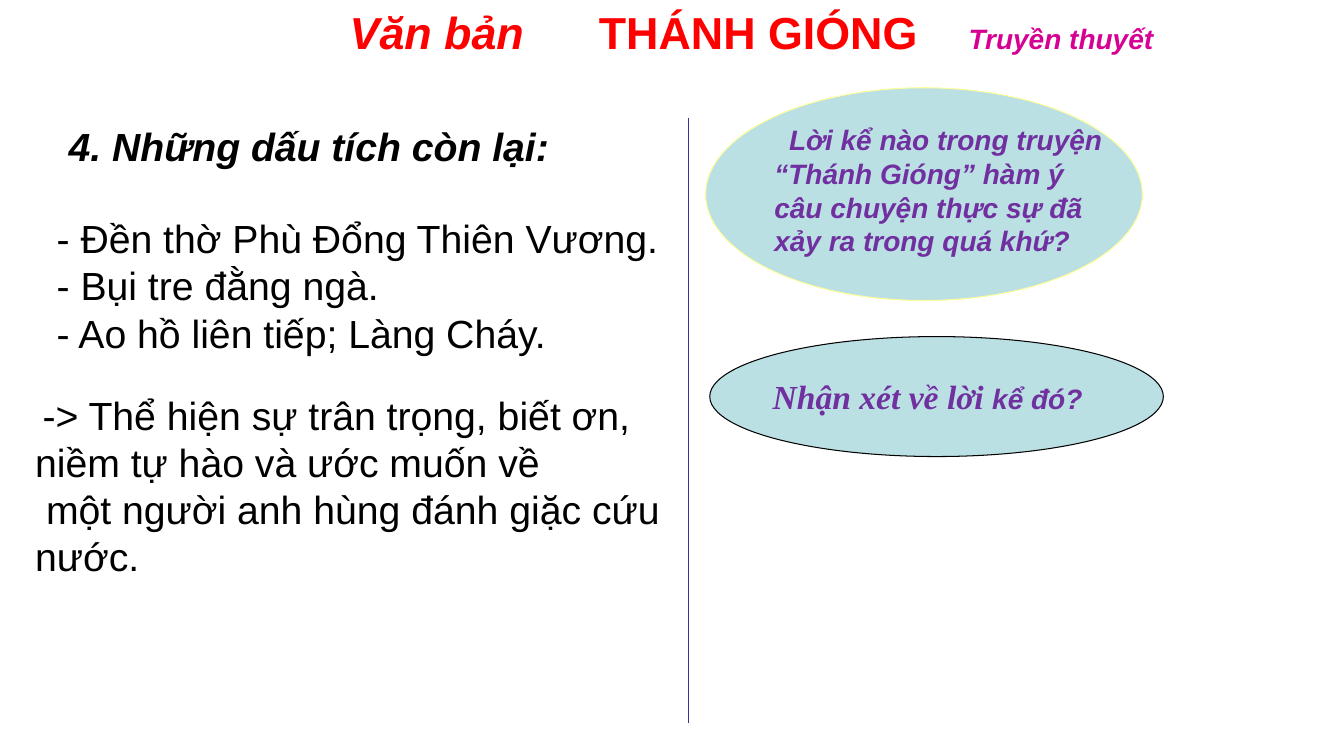
from lxml import etree
from pptx import Presentation
from pptx.dml.color import RGBColor
from pptx.enum import shapes, text
from pptx.oxml import ns
from pptx.util import Pt

SIZE = (960, 540)
RED, PINK, PURPLE, BLACK = "FF0000", "D60093", "7030A0", "000000"

TITLE = {
    "box": (242.6, 0, 590, 46),
    "tabs": (178, 442),
    "runs": [
        ("Văn bản\t", {"size": 32, "bold": True, "italic": True, "color": RED}),
        ("THÁNH GIÓNG\t", {"size": 32, "bold": True, "italic": False, "color": RED}),
        ("Truyền thuyết", {"size": 20, "bold": True, "italic": True, "color": PINK}),
    ],
}

BODY = {"size": 28, "color": BLACK}
HEAD = {"size": 28, "color": BLACK, "bold": True, "italic": True}
ASK = {"size": 20, "color": PURPLE, "bold": True, "italic": True}
SERIF = {**ASK, "size": 24, "name": "Times New Roman"}

OVALS = [
    ((507, 240.4, 324, 85.7), BLACK),
    ((504, 62.7, 312, 152), "FFFF99"),
]
FILL = "BBE0E3"
RULE = (492, 84.2, 492, 516.2)

NOTES = [
    ((42, 84.2, 435.6, 41), [(0, [("4. Những dấu tích còn lại:", HEAD)])]),
    ((10, 149.8, 470.2, 108.7), [
        (23.4, [("- Đền thờ Phù Đổng Thiên Vương.", BODY)]),
        (23.4, [("- Bụi tre đằng ngà.", BODY)]),
        (23.4, [("- Ao hồ liên tiếp; Làng Cháy.", BODY)]),
    ]),
    ((18, 275.8, 473.8, 142.6), [
        (5.3, [("-> Thể hiện sự trân trọng, biết ơn,", BODY)]),
        (0, [("niềm tự hào và ước muốn về", BODY)]),
        (7.8, [("một người anh hùng đánh giặc cứu nước.", BODY)]),
    ]),
    ((534.2, 265, 252, 36), [
        (10.6, [("Nhận xét về lời ", SERIF), ("kể đó?", ASK)]),
    ]),
    ((546, 84.2, 252, 104.4), [
        (10.6, [("Lời kể nào trong truyện “Thánh Gióng” hàm ý câu chuyện "
                 "thực sự đã xảy ra trong quá khứ?", ASK)]),
    ]),
]


def rgb(code):
    return RGBColor.from_string(code)


def pts(box):
    return [Pt(v) for v in box]


def add_runs(para, runs):
    for words, style in runs:
        run = para.add_run()
        run.text = words
        look = {"name": "Arial", **style}
        run.font.color.rgb = rgb(look.pop("color"))
        look["size"] = Pt(look["size"])
        for key, val in look.items():
            setattr(run.font, key, val)


def set_frame(frame):
    look = {
        "word_wrap": True,
        "auto_size": text.MSO_AUTO_SIZE.NONE,
        "vertical_anchor": text.MSO_ANCHOR.TOP,
        "margin_left": Pt(7.2), "margin_right": Pt(7.2),
        "margin_top": Pt(3.6), "margin_bottom": Pt(3.6),
    }
    for key, val in look.items():
        setattr(frame, key, val)


def add_title(slide):
    title = slide.shapes.title
    for key, val in zip(("left", "top", "width", "height"), pts(TITLE["box"])):
        setattr(title, key, val)
    set_frame(title.text_frame)
    para = title.text_frame.paragraphs[0]
    para.alignment = text.PP_ALIGN.LEFT
    stops = etree.SubElement(para._p.get_or_add_pPr(), ns.qn("a:tabLst"))
    for pos in TITLE["tabs"]:
        etree.SubElement(stops, ns.qn("a:tab"), pos=str(int(Pt(pos))), algn="l")
    add_runs(para, TITLE["runs"])


def add_rule(slide):
    rule = slide.shapes.add_connector(shapes.MSO_CONNECTOR.STRAIGHT, *pts(RULE))
    rule.line.color.rgb = rgb("333399")
    rule.line.width = Pt(0.75)
    etree.SubElement(rule._element.spPr, ns.qn("a:effectLst"))


def add_oval(slide, box, edge):
    oval = slide.shapes.add_shape(shapes.MSO_SHAPE.OVAL, *pts(box))
    oval.shadow.inherit = False
    oval.fill.solid()
    oval.fill.fore_color.rgb = rgb(FILL)
    oval.line.color.rgb = rgb(edge)
    oval.line.width = Pt(0.75)


def add_note(slide, box, paras):
    frame = slide.shapes.add_textbox(*pts(box)).text_frame
    set_frame(frame)
    for i, (indent, runs) in enumerate(paras):
        para = frame.add_paragraph() if i else frame.paragraphs[0]
        para._p.get_or_add_pPr().set("indent", str(int(Pt(indent))))
        add_runs(para, runs)


def main():
    deck = Presentation()
    deck.slide_width, deck.slide_height = pts(SIZE)
    slide = deck.slides.add_slide(deck.slide_layouts[5])
    add_title(slide)
    add_rule(slide)
    for box, edge in OVALS:
        add_oval(slide, box, edge)
    for box, paras in NOTES:
        add_note(slide, box, paras)
    deck.save("out.pptx")


if __name__ == "__main__":
    main()
